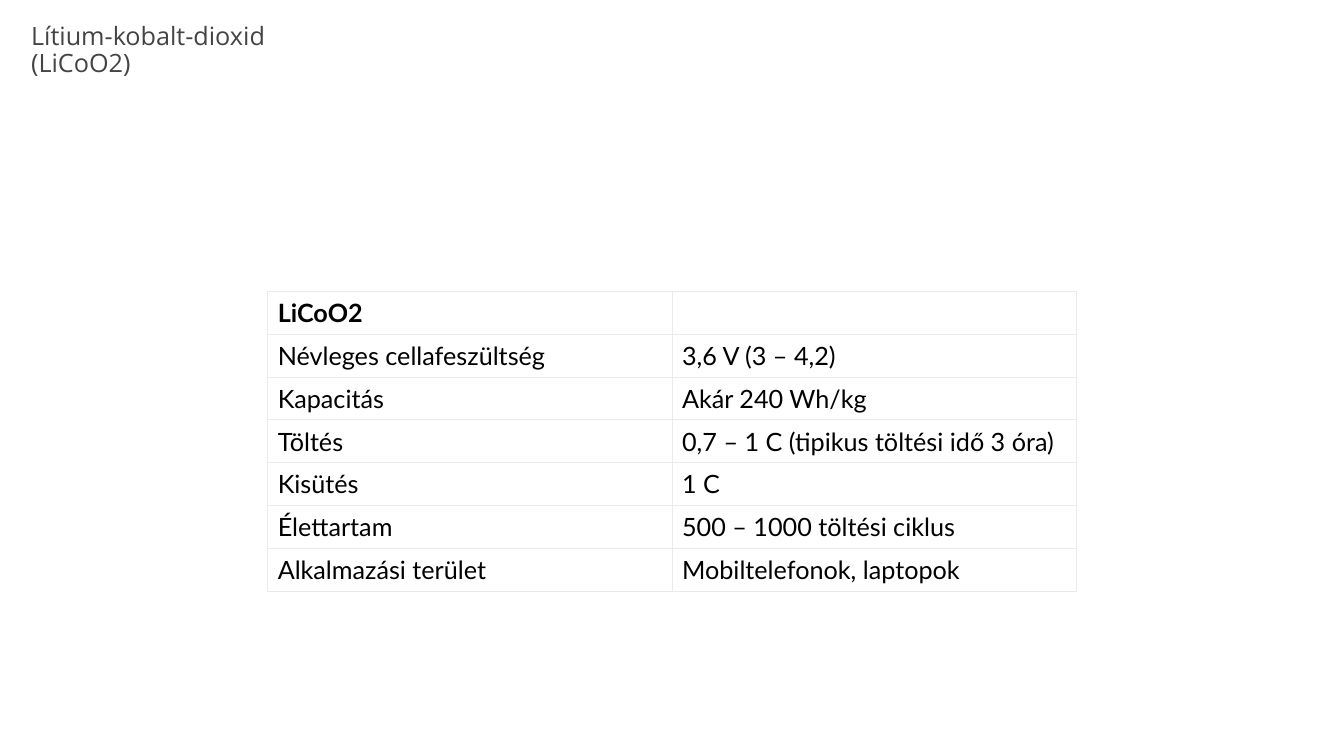
from dataclasses import dataclass

from lxml import etree
from pptx import Presentation
from pptx import util as u
from pptx.dml.color import RGBColor
from pptx.enum import text
from pptx.oxml import ns


@dataclass(frozen=True)
class Theme:
    title_font: str = "Open Sans"
    table_font: str = "Lato"
    size: u.Pt = u.Pt(18)
    title_color: str = "444444"
    text_color: str = "000000"
    cell_fill: str = "FFFFFF"
    border: str = "EAEAEA"
    border_width: u.Pt = u.Pt(0.75)


THEME = Theme()

PROPERTIES = [
    ("LiCoO2", ""),
    ("Névleges cellafeszültség", "3,6 V (3 – 4,2)"),
    ("Kapacitás", "Akár 240 Wh/kg"),
    ("Töltés", "0,7 – 1 C (tipikus töltési idő 3 óra)"),
    ("Kisütés", "1 C"),
    ("Élettartam", "500 – 1000 töltési ciklus"),
    ("Alkalmazási terület", "Mobiltelefonok, laptopok"),
]


def style_font(font, name, color, bold=False):
    font.name = name
    font.size = THEME.size
    font.bold = bold
    font.color.rgb = RGBColor.from_string(color)


def add_borders(cell):
    tc_pr = cell._tc.get_or_add_tcPr()
    for side in ("lnL", "lnR", "lnT", "lnB"):
        ln = etree.SubElement(tc_pr, ns.qn(f"a:{side}"), w=str(THEME.border_width))
        fill = etree.SubElement(ln, ns.qn("a:solidFill"))
        etree.SubElement(fill, ns.qn("a:srgbClr"), val=THEME.border)


def place_title(s, title, left, top, width, height):
    sp = s.shapes.title
    sp.left, sp.top, sp.width, sp.height = left, top, width, height
    tf = sp.text_frame
    tf.text = title
    tf.word_wrap = True
    tf.auto_size = text.MSO_AUTO_SIZE.SHAPE_TO_FIT_TEXT
    tf.vertical_anchor = text.MSO_ANCHOR.TOP
    p = tf.paragraphs[0]
    p.alignment = text.PP_ALIGN.LEFT
    p.line_spacing = 0.9
    p.space_before = u.Pt(0)
    style_font(p.runs[0].font, THEME.title_font, THEME.title_color)


def place_table(s, rows, left, top, width, height):
    table = s.shapes.add_table(len(rows), len(rows[0]), left, top, width, height).table
    table.first_row = table.horz_banding = False
    for i, values in enumerate(rows):
        for j, value in enumerate(values):
            cell = table.cell(i, j)
            cell.text = value
            cell.vertical_anchor = text.MSO_ANCHOR.MIDDLE
            cell.margin_left = cell.margin_right = u.Cm(0.25)
            cell.margin_top = cell.margin_bottom = u.Cm(0.15)
            add_borders(cell)
            cell.fill.solid()
            cell.fill.fore_color.rgb = RGBColor.from_string(THEME.cell_fill)
            style_font(cell.text_frame.paragraphs[0].font, THEME.table_font,
                       THEME.text_color, bold=i == 0)
            for r in cell.text_frame.paragraphs[0].runs:
                style_font(r.font, THEME.table_font, THEME.text_color, bold=i == 0)


def main():
    prs = Presentation()
    prs.slide_width, prs.slide_height = u.Cm(33.87), u.Cm(19.05)
    s = prs.slides.add_slide(prs.slide_layouts[5])
    place_title(s, "Lítium-kobalt-dioxid (LiCoO2)",
                u.Cm(0.53), u.Cm(0.46), u.Cm(8.84), u.Cm(1.02))
    place_table(s, PROPERTIES, u.Cm(6.75), u.Cm(7.34), u.Cm(20.38), u.Cm(7.56))
    prs.save("out.pptx")


if __name__ == "__main__":
    main()
